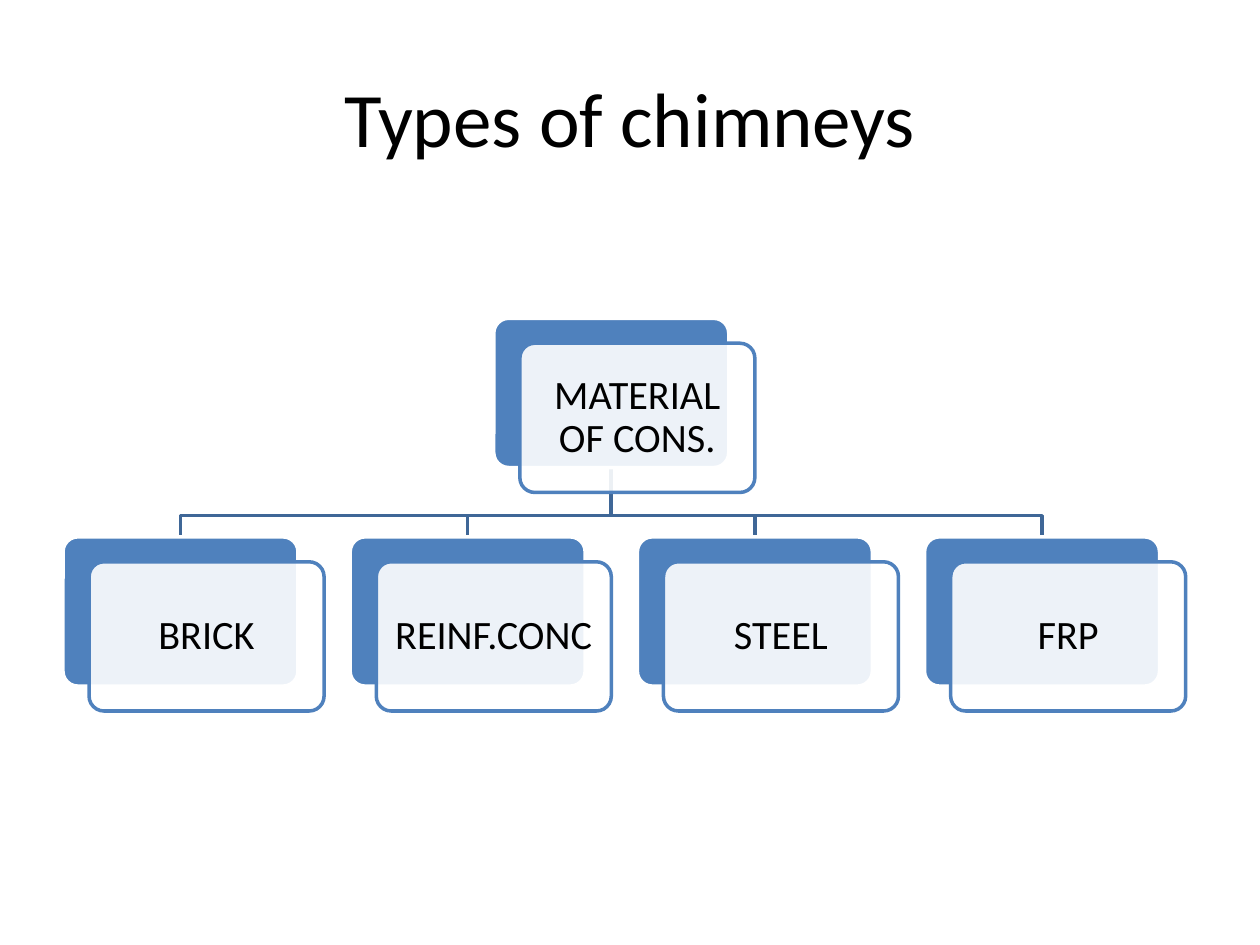
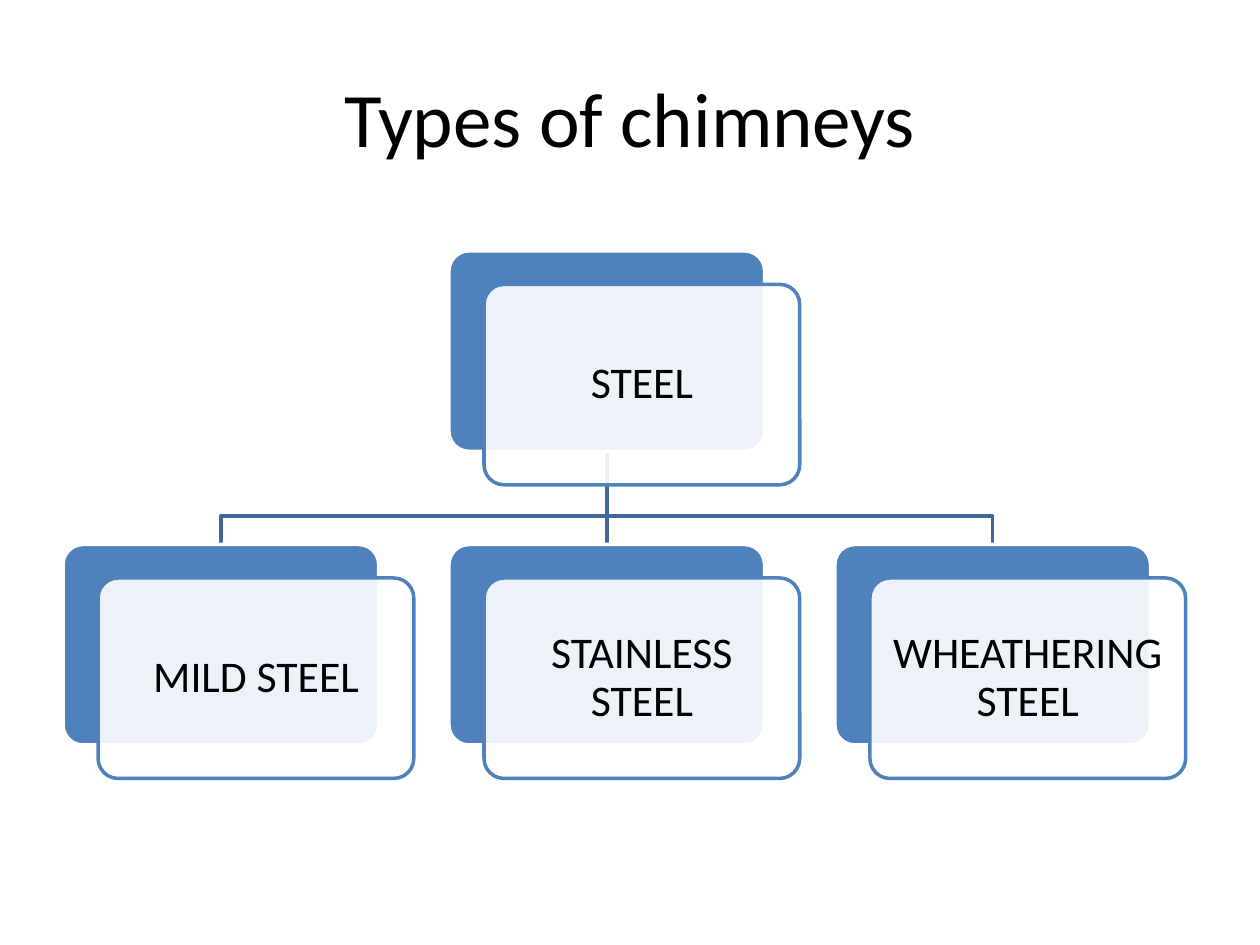
"""Build two slides that sort chimneys into types with layered hierarchy charts."""
import pptx
import pptx.dml.color
import pptx.enum.shapes
import pptx.enum.text
import pptx.oxml.ns
import pptx.util
from lxml import etree

RGBColor = pptx.dml.color.RGBColor
BLUE = RGBColor(0x4F, 0x81, 0xBD)
LINK_BLUE = RGBColor(0x3F, 0x67, 0x97)
WHITE = RGBColor(0xFF, 0xFF, 0xFF)
BLACK = RGBColor(0, 0, 0)

COLS, ROWS = 100, 75
CHART_LEFT, CHART_SPAN, CHART_MIDDLE = 5, 89.1, 40.85
CARD_ASPECT, PITCH, LEVEL = 0.635, 11 / 9, 0.93
SHIFT_X, SHIFT_Y, LINK_DROP = 1 / 9, 0.106, 0.09


class Deck:
    """Hold the shared style and the slide being drawn."""

    font = "Calibri"
    title_size = 44
    line_width = pptx.util.Pt(2)
    inset = pptx.util.Inches(0.06)

    def __init__(self, prs):
        """Take the presentation and the size of a grid cell."""
        self.prs = prs
        self.col = prs.slide_width / COLS
        self.row = prs.slide_height / ROWS
        self.s = None

    def point(self, x, y):
        """Turn a column and a row into a slide position."""
        return round(x * self.col), round(y * self.row)

    def box(self, x, y, w, h):
        """Turn columns and rows into a position and a size."""
        return self.point(x, y) + self.point(w, h)

    def label(self, tf, text, size):
        """Put one centred run in a text frame."""
        tf.word_wrap = True
        tf.vertical_anchor = pptx.enum.text.MSO_ANCHOR.MIDDLE
        p = tf.paragraphs[0]
        p.alignment = pptx.enum.text.PP_ALIGN.CENTER
        r = p.add_run()
        r.text = text
        r.font.name = self.font
        r.font.size = pptx.util.Pt(size)
        r.font.color.rgb = BLACK
        return p

    def slide(self, title):
        """Start a title-only slide."""
        self.s = self.prs.slides.add_slide(self.prs.slide_layouts[5])
        sp = self.s.shapes.title
        sp.left, sp.top, sp.width, sp.height = self.box(5, 3, 90, 12.5)
        self.label(sp.text_frame, title, self.title_size)

    def panel(self, x, y, w, fill, line):
        """Draw one rounded layer of a card."""
        sp = self.s.shapes.add_shape(
            pptx.enum.shapes.MSO_SHAPE.ROUNDED_RECTANGLE,
            *self.box(x, y, w, w * CARD_ASPECT))
        sp.adjustments[0] = 0.1
        sp.shadow.inherit = False
        sp.fill.solid()
        sp.fill.fore_color.rgb = fill
        sp.line.color.rgb = line
        sp.line.width = self.line_width
        return sp

    def card(self, x, y, w, text, size):
        """Draw a blue layer and a translucent labelled layer over it."""
        self.panel(x, y, w, BLUE, WHITE)
        sp = self.panel(x + w * SHIFT_X, y + w * SHIFT_Y, w, WHITE, BLUE)
        qn = pptx.oxml.ns.qn
        color = sp._element.spPr.find(qn("a:solidFill")).find(qn("a:srgbClr"))
        etree.SubElement(color, qn("a:alpha"), val="90000")
        tf = sp.text_frame
        tf.margin_left = tf.margin_right = self.inset
        tf.margin_top = tf.margin_bottom = self.inset
        self.label(tf, text, size).line_spacing = 0.9

    def link(self, x1, y1, x2, y2, bend):
        """Join a parent to a child, bending at a row unless they line up."""
        start, end = self.point(x1, y1), self.point(x2, y2)
        if abs(x1 - x2) < 0.01:
            sp = self.s.shapes.add_connector(
                pptx.enum.shapes.MSO_CONNECTOR.STRAIGHT, *start, *end)
            etree.SubElement(sp._element.spPr, pptx.oxml.ns.qn("a:effectLst"))
        else:
            outline = self.s.shapes.build_freeform(*start)
            outline.add_line_segments(
                [self.point(x1, bend), self.point(x2, bend), end], close=False)
            sp = outline.convert_to_shape()
            sp.fill.background()
            sp.shadow.inherit = False
        sp.line.color.rgb = LINK_BLUE
        sp.line.width = self.line_width

    def hierarchy(self, root, children, size):
        """Fit a root card and its row of children to the chart area."""
        n = len(children)
        w = CHART_SPAN / ((n - 1) * PITCH + 1 + SHIFT_X)
        top = CHART_MIDDLE - w * (LEVEL + CARD_ASPECT + SHIFT_Y) / 2
        child_top = top + w * LEVEL
        lefts = [CHART_LEFT + i * w * PITCH for i in range(n)]
        root_left = (lefts[0] + lefts[-1]) / 2
        for x in reversed(lefts):
            self.link(root_left + w / 2, top + w * CARD_ASPECT,
                      x + w / 2, child_top, child_top - w * LINK_DROP)
        self.card(root_left, top, w, root, size)
        for x, text in zip(lefts, children):
            self.card(x, child_top, w, text, size)


def main():
    """Build and save the deck."""
    prs = pptx.Presentation()
    prs.slide_width = pptx.util.Inches(10)
    prs.slide_height = pptx.util.Inches(7.5)
    deck = Deck(prs)
    charts = [
        ("MATERIAL OF CONS.", ["BRICK", "REINF.CONC", "STEEL", "FRP"], 23),
        ("STEEL", ["MILD STEEL", "STAINLESS STEEL", "WHEATHERING STEEL"], 25),
    ]
    for root, children, size in charts:
        deck.slide("Types of chimneys")
        deck.hierarchy(root, children, size)
    prs.save("out.pptx")


if __name__ == "__main__":
    main()
